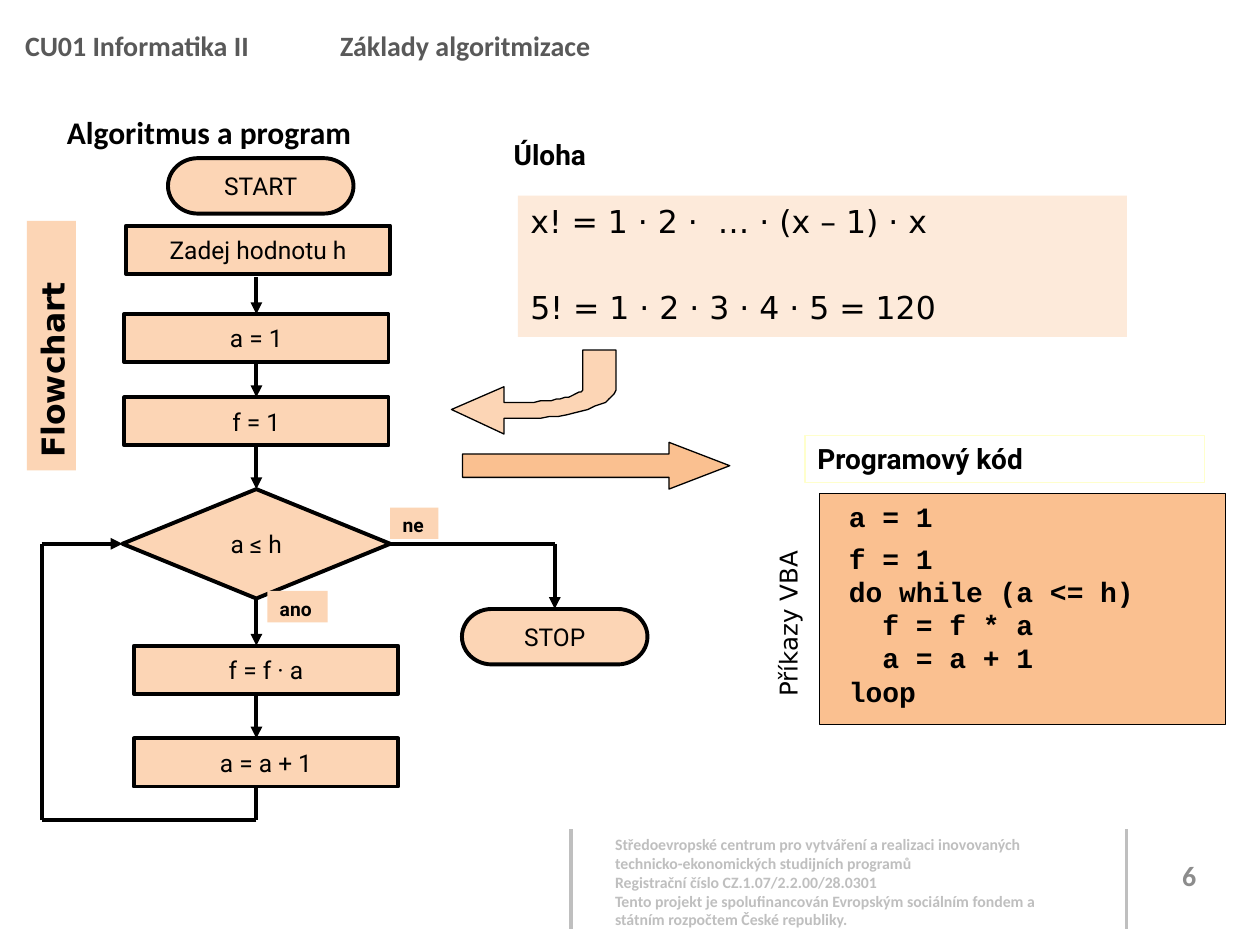
from dataclasses import dataclass, field
from typing import Optional

import pptx
import pptx.dml.color
import pptx.enum.shapes
import pptx.enum.text
import pptx.oxml.ns
import pptx.util
from lxml import etree

Pt = pptx.util.Pt
RGBColor = pptx.dml.color.RGBColor
SHAPE = pptx.enum.shapes.MSO_SHAPE
STRAIGHT = pptx.enum.shapes.MSO_CONNECTOR.STRAIGHT
ANCHOR = pptx.enum.text.MSO_ANCHOR
ALIGN = pptx.enum.text.PP_ALIGN
qn = pptx.oxml.ns.qn

BLACK = RGBColor(0x00, 0x00, 0x00)
HEADER_GRAY = RGBColor(0x59, 0x59, 0x59)
NUMBER_GRAY = RGBColor(0x8C, 0x8C, 0x8C)
FOOTER_GRAY = RGBColor(0xBF, 0xBF, 0xBF)
PEACH = RGBColor(0xFC, 0xD5, 0xB5)
PALE_PEACH = RGBColor(0xFD, 0xEA, 0xDA)
ORANGE = RGBColor(0xFA, 0xC0, 0x90)
CREAM = RGBColor(0xFF, 0xFF, 0xCC)

AXIS = 146.5       # centre line of the flowchart
LOOP_X = 23.8      # left edge of the loop
LOOP_BOTTOM = 468.7
TOP, LEFT, BOTTOM, RIGHT = range(4)


@dataclass
class Style:
    name: str
    size: float
    bold: bool = False
    color: RGBColor = BLACK
    align: ALIGN = ALIGN.LEFT
    anchor: ANCHOR = ANCHOR.TOP
    wrap: bool = True
    inset: tuple = (7.2, 3.6)
    paragraph: dict = field(default_factory=dict)


@dataclass
class Box:
    lines: list
    bounds: tuple  # left, top, width, height
    style: Style
    kind: Optional[SHAPE] = None  # None is a plain text box
    fill: Optional[RGBColor] = None
    line: Optional[RGBColor] = None
    line_width: float = 0.75
    rotation: float = 0


@dataclass
class Link:
    start: tuple  # (x, y) or (node name, side)
    end: tuple
    arrow: bool = True


def write_text(shape, lines: list, style: Style) -> None:
    frame = shape.text_frame
    side, edge = style.inset
    frame_format = {
        "word_wrap": style.wrap, "vertical_anchor": style.anchor,
        "auto_size": pptx.enum.text.MSO_AUTO_SIZE.NONE,
        "margin_left": Pt(side), "margin_right": Pt(side),
        "margin_top": Pt(edge), "margin_bottom": Pt(edge),
    }
    for name, value in frame_format.items():
        setattr(frame, name, value)
    for index, line in enumerate(lines):
        paragraph = frame.add_paragraph() if index else frame.paragraphs[0]
        run = paragraph.add_run()
        run.text = line
        for name, value in {"alignment": style.align, **style.paragraph}.items():
            if index or name != "space_before":
                setattr(paragraph, name, value)
        for name, value in {"name": style.name, "size": Pt(style.size), "bold": style.bold}.items():
            setattr(run.font, name, value)
        run.font.color.rgb = style.color


def paint(shape, fill: Optional[RGBColor], line: Optional[RGBColor], width: float) -> None:
    shape.shadow.inherit = False
    if fill is None:
        shape.fill.background()
    else:
        shape.fill.solid()
        shape.fill.fore_color.rgb = fill
    if line is None:
        shape.line.fill.background()
    else:
        shape.line.color.rgb = line
        shape.line.width = Pt(width)


def add_box(slide, box: Box):
    bounds = [Pt(value) for value in box.bounds]
    if box.kind is None:
        shape = slide.shapes.add_textbox(*bounds)
    else:
        shape = slide.shapes.add_shape(box.kind, *bounds)
        paint(shape, box.fill, box.line, box.line_width)
    shape.rotation = box.rotation
    if box.lines:
        write_text(shape, box.lines, box.style)
    return shape


def add_line(slide, start: tuple, end: tuple, color: RGBColor, width: float, arrow: bool):
    connector = slide.shapes.add_connector(STRAIGHT, *[Pt(value) for value in (*start, *end)])
    connector.line.color.rgb = color
    connector.line.width = Pt(width)
    if arrow:
        etree.SubElement(connector.line._get_or_add_ln(), qn("a:tailEnd"), type="triangle")
    etree.SubElement(connector._element.spPr, qn("a:effectLst"))
    return connector


def add_link(slide, link: Link, nodes: dict) -> None:
    ends = (link.start, link.end)
    points = [(0, 0) if isinstance(end[0], str) else end for end in ends]
    connector = add_line(slide, *points, BLACK, 2.25, link.arrow)
    for end, join in zip(ends, (connector.begin_connect, connector.end_connect)):
        if isinstance(end[0], str):
            join(nodes[end[0]], end[1])


def curve(start: tuple, first: tuple, second: tuple, end: tuple, steps: int = 16) -> list:
    """Points on a cubic Bezier curve, without its start."""
    points = []
    for step in range(1, steps + 1):
        t = step / steps
        weights = ((1 - t) ** 3, 3 * t * (1 - t) ** 2, 3 * t * t * (1 - t), t ** 3)
        points.append(tuple(sum(w * p[axis] for w, p in zip(weights, (start, first, second, end)))
                            for axis in (0, 1)))
    return points


NODE = Style("Roboto", 14, align=ALIGN.CENTER, anchor=ANCHOR.MIDDLE, wrap=False)
BRANCH = Style("Roboto", 11, bold=True, wrap=False)
HEADING = Style("Roboto", 16, bold=True)
TITLE = Style("Calibri", 18, bold=True)
HEADER = Style("Calibri", 16, bold=True, color=HEADER_GRAY, paragraph={"line_spacing": 1.5})
FOOTER = Style("Calibri", 9, bold=True, color=FOOTER_GRAY, inset=(3, 3))
NUMBER = Style("Calibri", 16, True, NUMBER_GRAY, ALIGN.CENTER, ANCHOR.MIDDLE)
FORMULA = Style("DejaVu Sans", 18, paragraph={"space_before": Pt(27.5)})
CODE = Style("Courier New", 16, bold=True, paragraph={"line_spacing": Pt(19)})
SIDE_LABEL = Style("DejaVu Sans", 18, bold=True)
CODE_LABEL = Style("DejaVu Sans", 14, align=ALIGN.CENTER)

BOXES = [
    Box(["Středoevropské centrum pro vytváření a realizaci inovovaných technicko-ekonomických studijních programů",
         "Registrační číslo CZ.1.07/2.2.00/28.0301",
         "Tento projekt je spolufinancován Evropským sociálním fondem a státním rozpočtem České republiky."],
        (348.5, 473.8, 255, 60.5), FOOTER),
    Box(["6"], (655, 485.5, 49, 29), NUMBER),
    Box(["CU01 Informatika II\t\tZáklady algoritmizace"], (7.2, 3, 687.6, 36), HEADER),
    Box(["Úloha"], (286.5, 75, 288, 26.6), HEADING),
    Box(["Programový kód"], (460, 249, 228.5, 26.6), HEADING, SHAPE.RECTANGLE, line=CREAM),
    Box(["x! = 1 ⋅ 2 ⋅  … ⋅ (x – 1) ⋅ x", "5! = 1 ⋅ 2 ⋅ 3 ⋅ 4 ⋅ 5 = 120"],
        (296, 111.8, 348, 80.8), FORMULA, SHAPE.RECTANGLE, PALE_PEACH),
    Box(["Příkazy VBA"], (370, 344, 161, 24.5), CODE_LABEL, rotation=270),
    Box(["Flowchart"], (-41.8, 183.5, 142.5, 28), SIDE_LABEL, SHAPE.RECTANGLE, PEACH, rotation=270),
]
CODE_BOX = Box([" a = 1", " f = 1", " do while (a <= h)", "   f = f * a", "   a = a + 1", " loop"],
               (468.5, 282, 232, 132), CODE, SHAPE.RECTANGLE, ORANGE, BLACK)
PROGRAM_ARROW = Box([], (264.3, 252.8, 152.7, 26.7), HEADING, SHAPE.RIGHT_ARROW, ORANGE, BLACK)

STEP, END_SIZE = (151, 27.5), (106, 31.7)
NODES = {
    "start": ("START", (96, 90.4, *END_SIZE), SHAPE.FLOWCHART_TERMINATOR),
    "input": ("Zadej hodnotu h", (72, 129, *STEP), SHAPE.RECTANGLE),
    "set a": ("a = 1", (71, 179.5, *STEP), SHAPE.RECTANGLE),
    "set f": ("f = 1", (71, 227, *STEP), SHAPE.RECTANGLE),
    "test": ("a ≤ h", (70, 279.5, 153, 62.5), SHAPE.DIAMOND),
    "multiply": ("f = f · a", (76.5, 369, *STEP), SHAPE.RECTANGLE),
    "increase": ("a = a + 1", (76.5, 422, *STEP), SHAPE.RECTANGLE),
    "stop": ("STOP", (264, 348, *END_SIZE), SHAPE.FLOWCHART_TERMINATOR),
}
TEST_Y, STOP_X = 310.75, 317
LINKS = [
    Link((AXIS, 158.5), ("set a", TOP)),
    Link(("set a", BOTTOM), ("set f", TOP)),
    Link(("set f", BOTTOM), ("test", TOP)),
    Link(("test", BOTTOM), (AXIS, 369)),
    Link((AXIS, 396), (AXIS, 422)),
    Link((AXIS, 449), (AXIS, LOOP_BOTTOM), arrow=False),
    Link((AXIS, LOOP_BOTTOM), (LOOP_X, LOOP_BOTTOM), arrow=False),
    Link((LOOP_X, LOOP_BOTTOM), (LOOP_X, TEST_Y), arrow=False),
    Link((LOOP_X, TEST_Y), ("test", LEFT)),
    Link(("test", RIGHT), (STOP_X, TEST_Y), arrow=False),
    Link((STOP_X, TEST_Y), ("stop", TOP)),
]
BRANCHES = [("ano", (152.8, 337.6, 34.4, 18)), ("ne", (223, 290, 27.5, 18))]

# Bent arrow from the task to the flowchart
BENT_ARROW = [
    (258.5, 234.5), (288, 247.7), (288, 239), (298, 239),
    *curve((298, 239), (328, 239), (352, 231), (352, 221)),
    (352, 200), (333.4, 200), (333.4, 221),
    *curve((333.4, 221), (333.4, 226), (317.5, 229.8), (298, 229.8)),
    (288, 229.8), (288, 221),
]


def main() -> None:
    presentation = pptx.Presentation()
    presentation.slide_width, presentation.slide_height = Pt(720), Pt(540)
    slide = presentation.slides.add_slide(presentation.slide_layouts[5])

    # Title
    title = slide.shapes.title
    title.left, title.top, title.width, title.height = Pt(31), Pt(61), Pt(663), Pt(29)
    write_text(title, ["Algoritmus a program"], TITLE)

    # Header, footer, task and labels
    for x in (326.3, 643.7):
        add_line(slide, (x, 474), (x, 531), FOOTER_GRAY, 2, False)
    for box in BOXES:
        add_box(slide, box)

    # Program code
    code = add_box(slide, CODE_BOX)
    code.text_frame.paragraphs[0].space_after = Pt(5)

    # Block arrows
    arrow = add_box(slide, PROGRAM_ARROW)
    arrow.adjustments[0], arrow.adjustments[1] = 0.5, 1.3
    builder = slide.shapes.build_freeform(*BENT_ARROW[0], scale=Pt(1))
    builder.add_line_segments(BENT_ARROW[1:], close=True)
    paint(builder.convert_to_shape(), PEACH, BLACK, 0.75)

    # Flowchart
    nodes = {name: add_box(slide, Box([text], bounds, NODE, kind, PEACH, BLACK, 2.25))
             for name, (text, bounds, kind) in NODES.items()}
    for link in LINKS:
        add_link(slide, link, nodes)
    for text, bounds in BRANCHES:
        add_box(slide, Box([text], bounds, BRANCH, SHAPE.RECTANGLE, PEACH))

    presentation.save("out.pptx")


if __name__ == "__main__":
    main()
